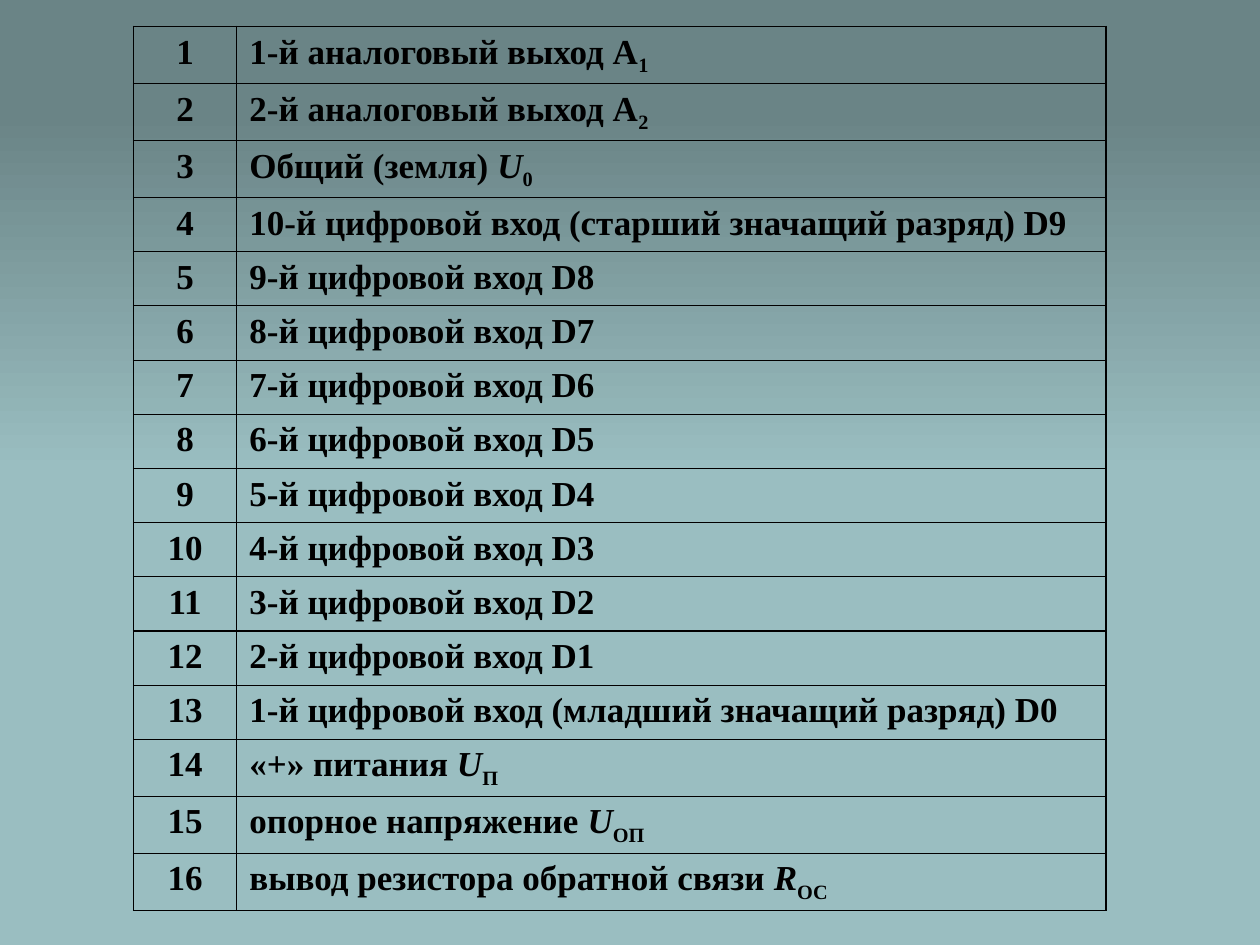
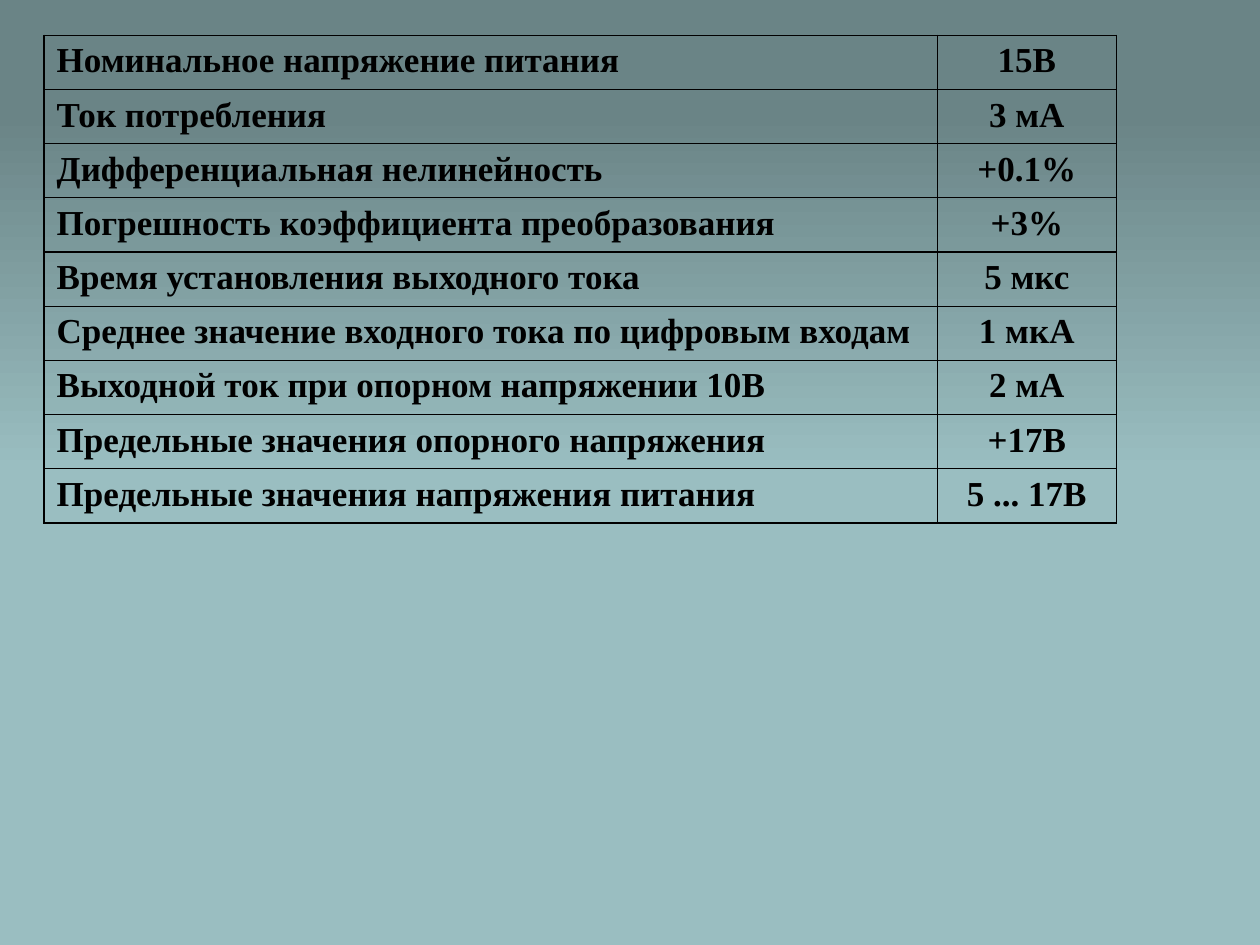
from copy import deepcopy

from lxml.etree import SubElement
from pptx import Presentation
from pptx.dml.color import RGBColor
from pptx.enum.text import PP_ALIGN
from pptx.oxml.ns import qn
from pptx.util import Inches, Pt

DARK_TEAL = RGBColor(0x6A, 0x84, 0x86)
LIGHT_TEAL = RGBColor(0x9A, 0xBE, 0xC1)
BLACK = RGBColor(0x00, 0x00, 0x00)
INNER_LINE = RGBColor(0x01, 0x00, 0x00)

BACKGROUND_STOPS = [(0, DARK_TEAL), (0.12, DARK_TEAL), (0.5, LIGHT_TEAL), (1, LIGHT_TEAL)]
CELL_FONT = {"name": "Times New Roman", "size": Pt(20), "bold": True}
PLAIN, ITALIC, SUBSCRIPT = "plain", "italic", "subscript"
ROW_HEIGHT = 0.43

BIT_NOTES = {10: " (старший значащий разряд)", 1: " (младший значащий разряд)"}
DIGITAL_INPUTS = [
    f"{number}-й цифровой вход{BIT_NOTES.get(number, '')} D{number - 1}"
    for number in range(10, 0, -1)
]
PIN_NAMES = [
    [("1-й аналоговый выход А", PLAIN), ("1", SUBSCRIPT)],
    [("2-й аналоговый выход А", PLAIN), ("2", SUBSCRIPT)],
    [("Общий (земля) ", PLAIN), ("U", ITALIC), ("0", SUBSCRIPT)],
    *DIGITAL_INPUTS,
    [("«+» питания ", PLAIN), ("U", ITALIC), ("П", SUBSCRIPT)],
    [("опорное напряжение ", PLAIN), ("U", ITALIC), ("ОП", SUBSCRIPT)],
    [("вывод резистора обратной связи ", PLAIN), ("R", ITALIC), ("ОС", SUBSCRIPT)],
]
PIN_ROWS = [(str(number), name) for number, name in enumerate(PIN_NAMES, start=1)]

PARAMETER_ROWS = [
    ("Номинальное напряжение питания", "15В"),
    ("Ток потребления", "3 мА"),
    ("Дифференциальная нелинейность", "+0.1%"),
    ("Погрешность коэффициента преобразования", "+3%"),
    ("Время установления выходного тока", "5 мкс"),
    ("Среднее значение входного тока по цифровым входам", "1 мкА"),
    ("Выходной ток при опорном напряжении 10В", "2 мА"),
    ("Предельные значения опорного напряжения", "+17В"),
    ("Предельные значения напряжения питания", "5 ... 17В"),
]


def set_background(master):
    """Give the slide master its vertical teal gradient."""
    fill = master.background.fill
    fill.gradient()
    fill.gradient_angle = 270
    stop_list = master.element.find(".//" + qn("a:gsLst"))
    while len(stop_list) < len(BACKGROUND_STOPS):
        stop_list.append(deepcopy(stop_list[0]))
    for stop, (position, color) in zip(fill.gradient_stops, BACKGROUND_STOPS):
        stop.position = position
        stop.color.rgb = color


def write_text(cell, content, alignment):
    """Write a string or a list of styled spans into a cell."""
    para = cell.text_frame.paragraphs[0]
    para.alignment = alignment
    spans = [(content, PLAIN)] if isinstance(content, str) else content
    for text, style in spans:
        span = para.add_run()
        span.text = text
        for name, value in CELL_FONT.items():
            setattr(span.font, name, value)
        span.font.color.rgb = BLACK
        if style == ITALIC:
            span.font.italic = True
        if style == SUBSCRIPT:
            span.font._element.set("baseline", "-25000")


def set_borders(cell, outer_sides):
    """Draw the cell borders, heavier on the outer sides of the table."""
    properties = cell._tc.get_or_add_tcPr()
    for side in "LRTB":
        color, width = (BLACK, 1) if side in outer_sides else (INNER_LINE, 0.75)
        line = SubElement(properties, qn(f"a:ln{side}"), w=str(Pt(width)))
        solid = SubElement(line, qn("a:solidFill"))
        SubElement(solid, qn("a:srgbClr"), val=str(color))


def add_grid(page, left, top, widths, alignments, rows):
    """Add a transparent table with ruled cells."""
    frame = page.shapes.add_table(
        len(rows), len(widths), Inches(left), Inches(top),
        Inches(sum(widths)), Inches(ROW_HEIGHT * len(rows)),
    )
    table = frame.table
    table.first_row = table.horz_banding = False
    for column, width in zip(table.columns, widths):
        column.width = Inches(width)
    last_row, last_column = len(rows) - 1, len(widths) - 1
    for row_index, row in enumerate(rows):
        table.rows[row_index].height = Inches(ROW_HEIGHT)
        for column_index, content in enumerate(row):
            cell = table.cell(row_index, column_index)
            edges = {
                "L": column_index == 0,
                "R": column_index == last_column,
                "T": row_index == 0,
                "B": row_index == last_row,
            }
            write_text(cell, content, alignments[column_index])
            set_borders(cell, [side for side, is_outer in edges.items() if is_outer])
            cell.fill.background()


def main():
    """Build the pin table and the parameter table."""
    deck = Presentation()
    deck.slide_width, deck.slide_height = Inches(10), Inches(7.5)
    set_background(deck.slide_master)
    blank = deck.slide_layouts.get_by_name("Blank")
    pins_page = deck.slides.add_slide(blank)
    add_grid(pins_page, 1.06, 0.21, [0.82, 6.9], [PP_ALIGN.CENTER, PP_ALIGN.LEFT], PIN_ROWS)
    parameters_page = deck.slides.add_slide(blank)
    add_grid(parameters_page, 0.35, 0.28, [7.09, 1.42], [PP_ALIGN.LEFT, PP_ALIGN.CENTER], PARAMETER_ROWS)
    deck.save("out.pptx")


if __name__ == "__main__":
    main()
